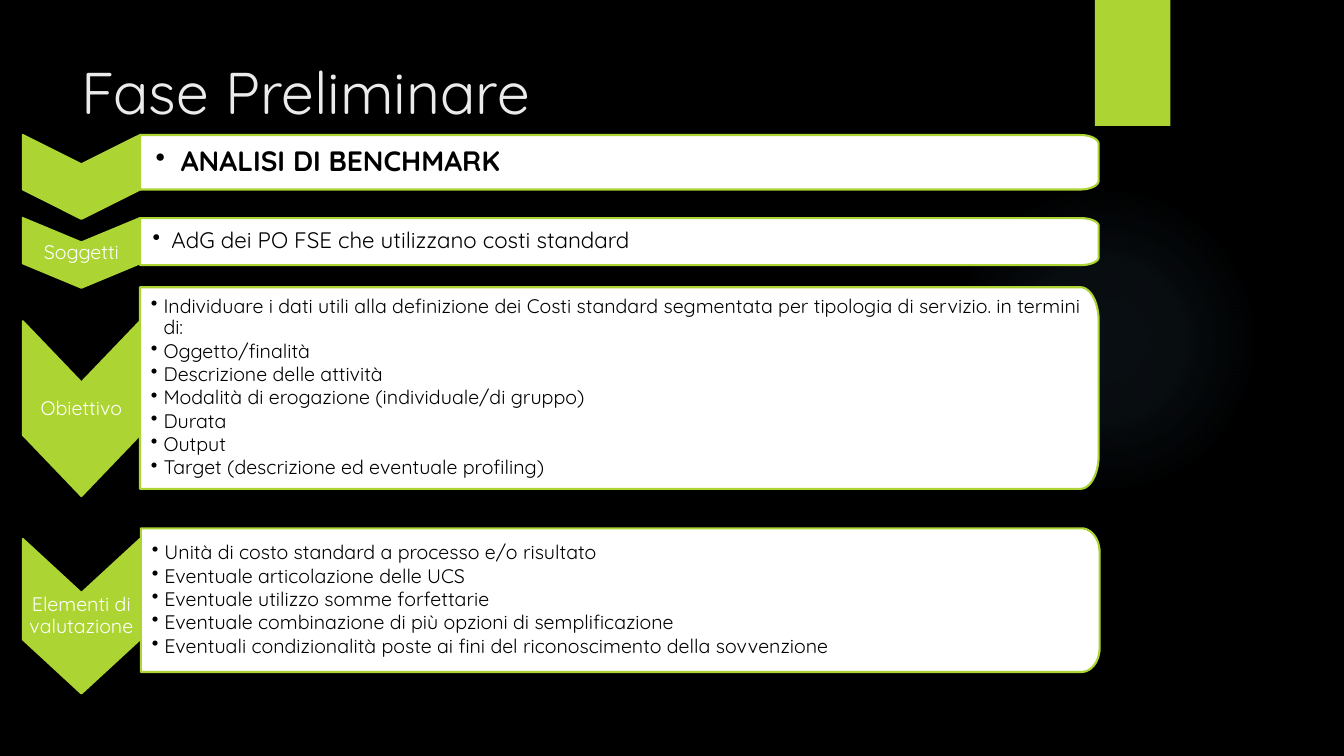
import math
from dataclasses import dataclass

import lxml.etree
import pptx
import pptx.dml.color
import pptx.enum.shapes
import pptx.enum.text
import pptx.oxml
import pptx.oxml.ns
import pptx.util

Pt = pptx.util.Pt
ALIGN = pptx.enum.text.PP_ALIGN
ANCHOR = pptx.enum.text.MSO_ANCHOR
SHAPE = pptx.enum.shapes.MSO_SHAPE


@dataclass(frozen=True)
class Theme:
    font: str = "Quicksand"
    background: str = "000000"
    accent: str = "ACD433"
    glow: str = "7AC4F0"
    card: str = "FFFFFF"
    title: str = "EBEBEB"
    label: str = "FFFFFF"
    body: str = "000000"
    title_size: float = 42
    heading_size: float = 20
    subheading_size: float = 16
    text_size: float = 14
    outline: float = 1.5


def rgb(value):
    return pptx.dml.color.RGBColor.from_string(value)


def set_all(target, values):
    for name, value in values.items():
        setattr(target, name, value)


class SlideBuilder:
    def __init__(self, slide, theme):
        self.slide = slide
        self.theme = theme
        fill = slide.background.fill
        fill.solid()
        fill.fore_color.rgb = rgb(theme.background)

    def paint(self, sp, color, outlined=True):
        sp.shadow.inherit = False
        sp.fill.solid()
        sp.fill.fore_color.rgb = rgb(color)
        if outlined:
            sp.line.color.rgb = rgb(self.theme.accent)
            sp.line.width = Pt(self.theme.outline)
        else:
            sp.line.fill.background()

    def glow(self, left, top, size, stops):
        """Draw a soft disc; stops are (position, opacity) percentages."""
        sp = self.slide.shapes.add_shape(SHAPE.OVAL, Pt(left), Pt(top), Pt(size), Pt(size))
        self.paint(sp, self.theme.glow, outlined=False)
        marks = "".join(
            f'<a:gs pos="{pos * 1000}"><a:srgbClr val="{self.theme.glow}">'
            f'<a:alpha val="{alpha * 1000}"/></a:srgbClr></a:gs>'
            for pos, alpha in stops)
        gradient = pptx.oxml.parse_xml(
            f'<a:gradFill {pptx.oxml.ns.nsdecls("a")}><a:gsLst>{marks}</a:gsLst>'
            '<a:path path="circle"><a:fillToRect l="50000" t="50000" r="50000" b="50000"/>'
            '</a:path></a:gradFill>')
        props = sp.element.spPr
        props.replace(props.find(pptx.oxml.ns.qn("a:solidFill")), gradient)

    def bar(self, left, top, width, height):
        sp = self.slide.shapes.add_shape(
            SHAPE.RECTANGLE, Pt(left), Pt(top), Pt(width), Pt(height))
        self.paint(sp, self.theme.accent, outlined=False)

    def outline(self, points, color):
        start, *rest = [(Pt(x), Pt(y)) for x, y in points]
        builder = self.slide.shapes.build_freeform(*start)
        builder.add_line_segments(rest, close=True)
        sp = builder.convert_to_shape()
        self.paint(sp, color)
        return sp

    def add_text(self, sp, lines, insets, size, color, bold=False, indent=0,
                 anchor=ANCHOR.MIDDLE, **paragraph):
        """Fill a shape with paragraphs; a positive indent adds bullets."""
        tf = sp.text_frame
        sides = ("margin_left", "margin_top", "margin_right", "margin_bottom")
        set_all(tf, {"word_wrap": True, "vertical_anchor": anchor,
                     **{side: Pt(inset) for side, inset in zip(sides, insets)}})
        for i, line in enumerate(lines):
            p = tf.add_paragraph() if i else tf.paragraphs[0]
            set_all(p, {"alignment": ALIGN.LEFT, **paragraph})
            if indent:
                props = p._p.get_or_add_pPr()
                props.set("marL", str(Pt(indent)))
                props.set("indent", str(-Pt(indent)))
                bullet = lxml.etree.SubElement(props, pptx.oxml.ns.qn("a:buChar"))
                bullet.set("char", "•")
            r = p.add_run()
            r.text = line
            set_all(r.font, {"name": self.theme.font, "size": Pt(size), "bold": bold})
            r.font.color.rgb = rgb(color)

    def title(self, text, left, top, width, height):
        sp = self.slide.shapes.add_textbox(Pt(left), Pt(top), Pt(width), Pt(height))
        self.add_text(sp, [text], (7.2, 3.6, 7.2, 3.6), self.theme.title_size,
                      self.theme.title, anchor=ANCHOR.TOP)

    def chevron(self, left, top, width, height, label):
        right, middle, notch = left + width, left + width / 2, height * 0.35
        sp = self.outline([(right, top), (right, top + height - notch), (middle, top + height),
                           (left, top + height - notch), (left, top), (middle, top + notch)],
                          self.theme.accent)
        if label:
            self.add_text(sp, [label], (0.7, 0, 0.7, 0), self.theme.text_size,
                          self.theme.label, alignment=ALIGN.CENTER, line_spacing=0.9)

    def card(self, left, top, width, height, lines, size, inset, indent, bold=False):
        """Draw a bulleted box whose right corners are quarter ellipses."""
        right, bottom, rx, ry = left + width, top + height, 13, height / 6
        turns = [math.radians(step * 7.5) for step in range(13)]
        upper = [(right - rx + rx * math.sin(t), top + ry - ry * math.cos(t)) for t in turns]
        lower = [(x, top + bottom - y) for x, y in reversed(upper)]
        sp = self.outline([(left, top), *upper, *lower, (left, bottom)], self.theme.card)
        self.add_text(sp, lines, (inset, 4.5, 4.5, 4.5), size, self.theme.body, bold, indent,
                      line_spacing=0.9, space_after=Pt(size * 0.11))


def main():
    prs = pptx.Presentation()
    prs.slide_width, prs.slide_height = Pt(960), Pt(540)
    theme = Theme()
    s = SlideBuilder(prs.slides.add_slide(prs.slide_layouts[6]), theme)

    s.glow(677.5, 131.8, 221.8, [(0, 7), (36, 6), (69, 0)])
    s.bar(782, 0, 54, 90)
    s.title("Fase Preliminare", 51, 36, 741, 110)

    heading = {"size": theme.heading_size, "inset": 11.2, "indent": 18, "bold": True}
    subheading = {"size": theme.subheading_size, "inset": 9, "indent": 13.5}
    listing = {"size": theme.text_size, "inset": 7.8, "indent": 9}
    # label, chevron top and height, card left, top and height, format, lines
    phases = [
        ("", 96.5, 59.8, 100, 96.5, 38.9, heading, ["ANALISI DI BENCHMARK"]),
        ("Soggetti", 155.8, 49.7, 100, 155.8, 33.6, subheading,
         ["AdG dei PO FSE che utilizzano costi standard"]),
        ("Obiettivo", 229.5, 124.8, 100, 205.2, 144, listing, [
            "Individuare i dati utili alla definizione dei Costi standard segmentata "
            "per tipologia di servizio. in termini di:",
            "Oggetto/finalità",
            "Descrizione delle attività",
            "Modalità di erogazione (individuale/di gruppo)",
            "Durata",
            "Output",
            "Target (descrizione ed eventuale profiling)"]),
        ("Elementi di valutazione", 385, 110.3, 100.7, 377.4, 102.6, listing, [
            "Unità di costo standard a processo e/o risultato",
            "Eventuale articolazione delle UCS",
            "Eventuale utilizzo somme forfettarie",
            "Eventuale combinazione di più opzioni di semplificazione",
            "Eventuali condizionalità poste ai fini del riconoscimento della sovvenzione"]),
    ]
    for label, tip_top, tip_height, left, top, height, style, lines in phases:
        s.chevron(16.3, tip_top, 83.7, tip_height, label)
        s.card(left, top, 684.8, height, lines, **style)

    prs.save("out.pptx")


if __name__ == "__main__":
    main()
